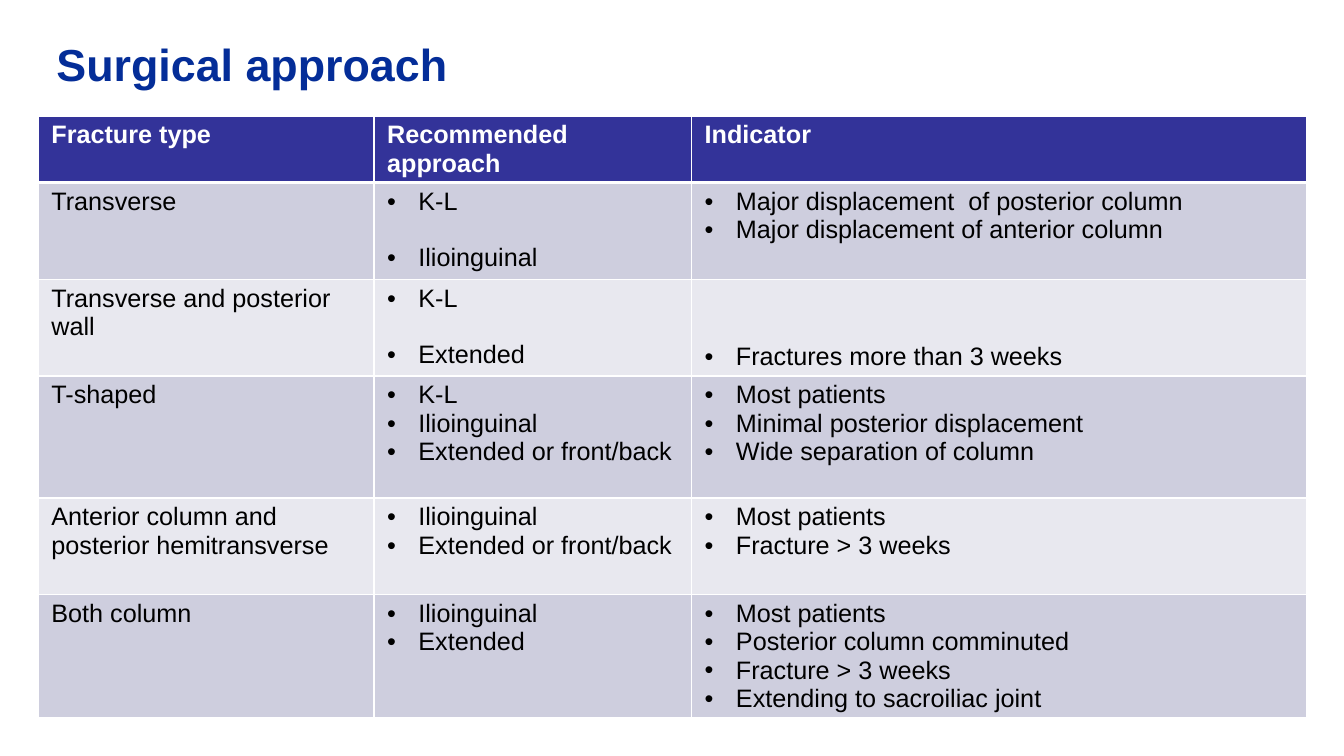
from dataclasses import dataclass

from lxml import etree
from pptx import Presentation
from pptx.dml.color import RGBColor
from pptx.enum.text import MSO_ANCHOR, PP_ALIGN
from pptx.oxml.ns import qn
from pptx.util import Inches, Pt

LEFT = PP_ALIGN.LEFT
TOP, BOTTOM = MSO_ANCHOR.TOP, MSO_ANCHOR.BOTTOM
WIDE, HIGH = 13.33, 7.5


@dataclass(frozen=True)
class Theme:
    font: str = "Arial"
    title: str = "042D98"
    head: str = "333399"
    bands: tuple = ("CECEDE", "E8E8EF")
    light: str = "FFFFFF"
    dark: str = "000000"
    big: int = 32
    body: int = 18
    gap: int = 20
    thin: int = 1
    thick: int = 3


THEME = Theme()

COLS = (3.33, 3.15, 6.1)
ROWS = (0.64, 0.96, 0.96, 1.21, 0.96, 1.21)
HEADS = ("Fracture type", "Recommended approach", "Indicator")
# Fracture type, approaches, indicators
CASES = (
    ("Transverse", ("K-L", "Ilioinguinal"),
     ("Major displacement  of posterior column",
      "Major displacement of anterior column")),
    ("Transverse and posterior wall", ("K-L", "Extended"),
     ("Fractures more than 3 weeks",)),
    ("T-shaped", ("K-L", "Ilioinguinal", "Extended or front/back"),
     ("Most patients", "Minimal posterior displacement",
      "Wide separation of column")),
    ("Anterior column and posterior hemitransverse",
     ("Ilioinguinal", "Extended or front/back"),
     ("Most patients", "Fracture > 3 weeks")),
    ("Both column", ("Ilioinguinal", "Extended"),
     ("Most patients", "Posterior column comminuted",
      "Fracture > 3 weeks", "Extending to sacroiliac joint")),
)
SPREAD = (1, 2)  # cases whose two approaches stand a line apart
LOW = 2  # case whose indicator stands beside the last approach


def write(frame, lines, size=THEME.body, color=THEME.dark, bold=False,
          bullet=False, gap=0, lead=None):
    frame.word_wrap = True
    for i, line in enumerate(lines):
        para = frame.paragraphs[0] if i == 0 else frame.add_paragraph()
        if bullet:
            props = para._p.get_or_add_pPr()
            props.set("marL", str(Inches(0.31)))
            props.set("indent", str(-Inches(0.31)))
            etree.SubElement(props, qn("a:buFont")).set("typeface", THEME.font)
            etree.SubElement(props, qn("a:buChar")).set("char", "•")
        para.alignment = LEFT
        para.space_before = Pt(gap if i else 0)
        if lead:
            para.line_spacing = lead
        run = para.add_run()
        run.text = line
        font = run.font
        font.name, font.size, font.bold = THEME.font, Pt(size), bold
        font.color.rgb = RGBColor.from_string(color)


def edge(cell, top, base):
    """Draw the four borders, which must precede the fill."""
    props = cell._tc.get_or_add_tcPr()
    widths = (("L", THEME.thin), ("R", THEME.thin), ("T", top), ("B", base))
    for i, (side, width) in enumerate(widths):
        line = etree.Element(qn("a:ln" + side), w=str(Pt(width)))
        fill = etree.SubElement(line, qn("a:solidFill"))
        etree.SubElement(fill, qn("a:srgbClr")).set("val", THEME.light)
        props.insert(i, line)


def style(cell, row, fill):
    cell.fill.solid()
    cell.fill.fore_color.rgb = RGBColor.from_string(fill)
    cell.margin_left = cell.margin_right = Inches(0.13)
    cell.margin_top = cell.margin_bottom = Inches(0.05)
    cell.vertical_anchor = TOP
    edge(cell, THEME.thick if row == 1 else THEME.thin,
         THEME.thick if row == 0 else THEME.thin)


def heading(slide, box, text):
    title = slide.shapes.title
    title.left, title.top, title.width, title.height = map(Inches, box)
    frame = title.text_frame
    frame.margin_left = frame.margin_right = 0
    frame.margin_top = frame.margin_bottom = 0
    frame.vertical_anchor = TOP
    write(frame, [text], size=THEME.big, color=THEME.title, bold=True,
          lead=0.9)


def chart(slide, box):
    left, top, width, height = box
    grid = slide.shapes.add_table(len(ROWS), len(COLS),
                                  *map(Inches, box)).table
    for col, part in zip(grid.columns, COLS):
        col.width = Inches(width * part / sum(COLS))
    for row, part in zip(grid.rows, ROWS):
        row.height = Inches(height * part / sum(ROWS))

    # Header row
    for c, text in enumerate(HEADS):
        cell = grid.cell(0, c)
        style(cell, 0, THEME.head)
        write(cell.text_frame, [text], color=THEME.light, bold=True)

    # One row for each fracture type
    for r, (kind, ways, signs) in enumerate(CASES, 1):
        for c, lines in enumerate(((kind,), ways, signs)):
            cell = grid.cell(r, c)
            style(cell, r, THEME.bands[(r - 1) % 2])
            apart = c == 1 and r in SPREAD
            write(cell.text_frame, lines, bullet=c > 0,
                  gap=THEME.gap if apart else 0)
    grid.cell(LOW, 2).vertical_anchor = BOTTOM


def main():
    deck = Presentation()
    deck.slide_width, deck.slide_height = Inches(WIDE), Inches(HIGH)
    slide = deck.slides.add_slide(deck.slide_layouts[5])
    heading(slide, (0.56, 0.42, 12.07, 1), "Surgical approach")
    chart(slide, (0.38, 1.15, sum(COLS), sum(ROWS)))
    deck.save("out.pptx")


if __name__ == "__main__":
    main()
